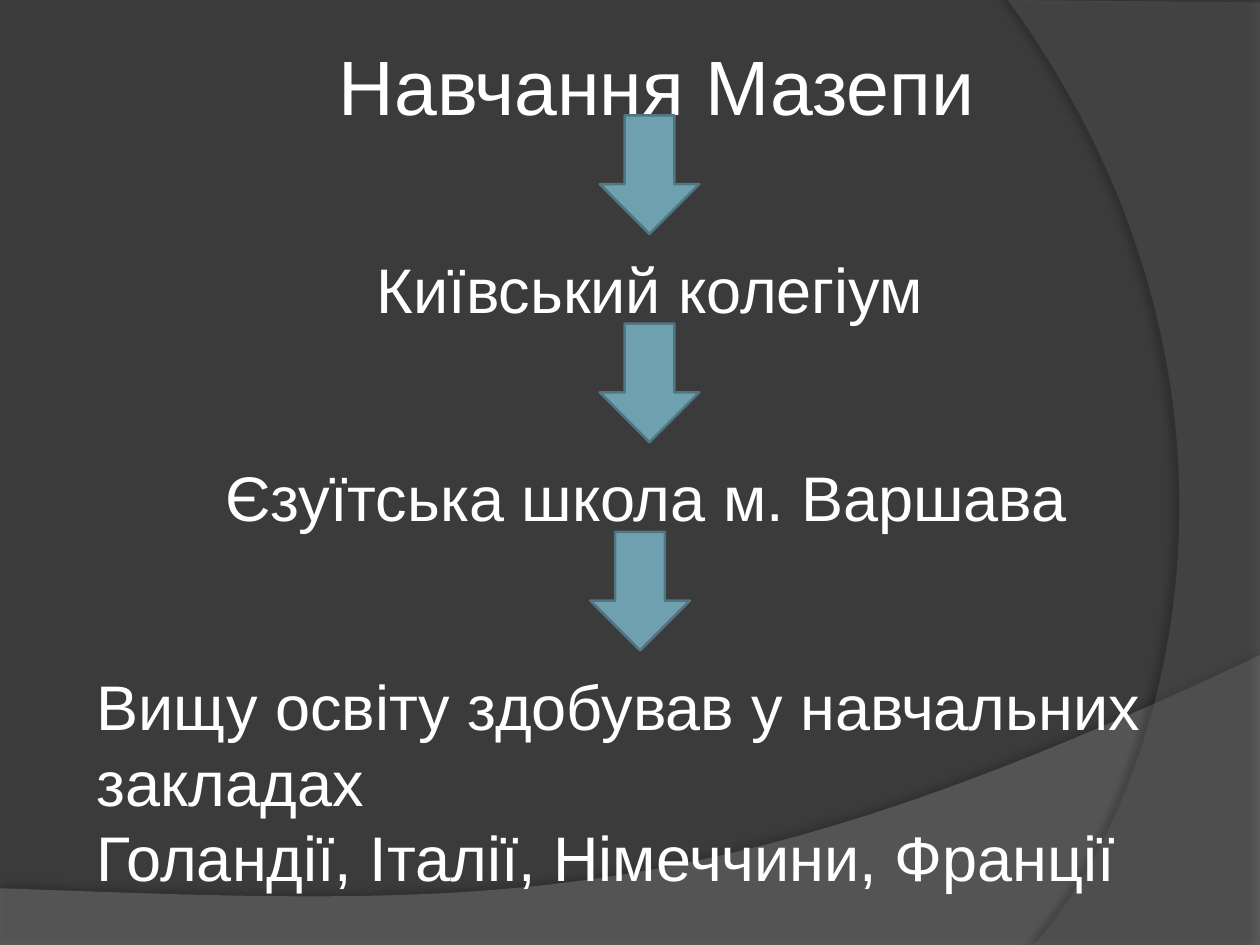
from pptx import Presentation
from pptx.dml.color import RGBColor
from pptx.enum.shapes import MSO_SHAPE
from pptx.enum.text import MSO_ANCHOR, MSO_AUTO_SIZE, PP_ALIGN
from pptx.oxml import parse_xml
from pptx.oxml.ns import nsdecls, qn
from pptx.util import Pt

DOWN_ARROW = MSO_SHAPE.DOWN_ARROW
TOP = MSO_ANCHOR.TOP
FIT_SHAPE, FIT_NONE = MSO_AUTO_SIZE.SHAPE_TO_FIT_TEXT, MSO_AUTO_SIZE.NONE
LEFT, CENTER = PP_ALIGN.LEFT, PP_ALIGN.CENTER

FONT = "Arial"
WHITE = RGBColor(0xFF, 0xFF, 0xFF)
BACKGROUND = RGBColor(0x3B, 0x3B, 0x3B)
WAVE_GREY = RGBColor(0x7F, 0x7F, 0x7F)
ARC_GREY = RGBColor(0x5E, 0x5E, 0x5E)
ARROW_FILL = RGBColor(0x6E, 0xA0, 0xB0)
ARROW_LINE = RGBColor(0x51, 0x76, 0x82)

SLIDE_WIDTH, SLIDE_HEIGHT = 720, 540
TITLE_BOX = (127.4, 15.1, 493.2, 118.8)
ARROW_SIZE = (56.9, 67.7)
CURVE_STEPS = 60

# Each step: text box, alignment, paragraphs
STEPS = [
    ((144.7, 139.7, 453.6, 51), CENTER, ["Київський колегіум"]),
    ((121.7, 258.5, 504.7, 51), LEFT, ["Єзуїтська школа м. Варшава"]),
    ((48.2, 378, 686.2, 138.2), LEFT,
     ["Вищу освіту здобував у навчальних закладах",
      "Голандії, Італії, Німеччини, Франції"]),
]
ARROW_CORNERS = [(342.7, 66), (342.7, 185), (337.3, 304)]


def curve(start, control_1, control_2, end):
    """Return points along a cubic Bezier curve."""
    points = []
    for step in range(CURVE_STEPS + 1):
        t = step / CURVE_STEPS
        weights = ((1 - t) ** 3, 3 * t * (1 - t) ** 2, 3 * t ** 2 * (1 - t), t ** 3)
        points.append(tuple(
            sum(weight * value for weight, value in zip(weights, values))
            for values in zip(start, control_1, control_2, end)))
    return points


def add_backdrop(slide, points, color, opacity, shadow_opacity, distance, angle):
    """Add a translucent outline with a soft shadow."""
    corners = [(Pt(x), Pt(y)) for x, y in points]
    builder = slide.shapes.build_freeform(*corners[0], scale=1.0)
    builder.add_line_segments(corners[1:], close=True)
    shape = builder.convert_to_shape()
    shape.fill.solid()
    shape.fill.fore_color.rgb = color
    shape.line.fill.background()
    shape.shadow.inherit = False
    properties = shape._element.spPr
    fill_color = properties.find(qn("a:solidFill")).find(qn("a:srgbClr"))
    fill_color.append(parse_xml(
        f'<a:alpha {nsdecls("a")} val="{opacity * 1000}"/>'))
    properties.find(qn("a:effectLst")).append(parse_xml(
        f'<a:outerShdw {nsdecls("a")} blurRad="{Pt(4)}" dist="{Pt(distance)}" '
        f'dir="{angle * 60000}" algn="ctr" rotWithShape="0"><a:srgbClr val="000000">'
        f'<a:alpha val="{shadow_opacity * 1000}"/></a:srgbClr></a:outerShdw>'))


def add_backdrops(slide, width, height):
    wave = [(0, height), (width, height)]
    wave += curve((width, 374.4), (402.5, 524.9), (281.5, 517.7), (0, 507.6))
    add_backdrop(slide, wave, WAVE_GREY, 45, 35, 3.5, 270)
    arc = [(width, 1.4), (width, height)]
    arc += curve((591.1, height), (673.2, 445.7), (733, 216), (576, 0))
    add_backdrop(slide, arc, ARC_GREY, 40, 45, 4, 180)


def write_paragraph(paragraph, text, size, alignment):
    paragraph.alignment = alignment
    run = paragraph.add_run()
    run.text = text
    run.font.name = FONT
    run.font.size = Pt(size)
    run.font.color.rgb = WHITE


def place_title(slide, box):
    title = slide.shapes.title
    title.left, title.top, title.width, title.height = map(Pt, box)
    frame = title.text_frame
    frame.word_wrap = True
    frame.auto_size = FIT_NONE
    frame.vertical_anchor = TOP
    frame.margin_left, frame.margin_top = Pt(10), Pt(6.8)
    write_paragraph(frame.paragraphs[0], "Навчання Мазепи", 44, CENTER)


def add_step(slide, box, alignment, texts):
    frame = slide.shapes.add_textbox(*map(Pt, box)).text_frame
    frame.word_wrap = True
    frame.auto_size = FIT_SHAPE
    for index, text in enumerate(texts):
        paragraph = frame.add_paragraph() if index else frame.paragraphs[0]
        write_paragraph(paragraph, text, 36, alignment)


def add_arrow(slide, box):
    arrow = slide.shapes.add_shape(DOWN_ARROW, *map(Pt, box))
    arrow.shadow.inherit = False
    arrow.fill.solid()
    arrow.fill.fore_color.rgb = ARROW_FILL
    arrow.line.color.rgb = ARROW_LINE
    arrow.line.width = Pt(1.5)


def main():
    presentation = Presentation()
    presentation.slide_width = Pt(SLIDE_WIDTH)
    presentation.slide_height = Pt(SLIDE_HEIGHT)
    slide = presentation.slides.add_slide(
        presentation.slide_layouts.get_by_name("Title Only"))
    slide.background.fill.solid()
    slide.background.fill.fore_color.rgb = BACKGROUND

    # Decoration behind the content, then the chain of steps
    add_backdrops(slide, SLIDE_WIDTH, SLIDE_HEIGHT)
    place_title(slide, TITLE_BOX)
    for step, corner in zip(STEPS, ARROW_CORNERS):
        add_arrow(slide, corner + ARROW_SIZE)
        add_step(slide, *step)

    presentation.save("out.pptx")


if __name__ == "__main__":
    main()
